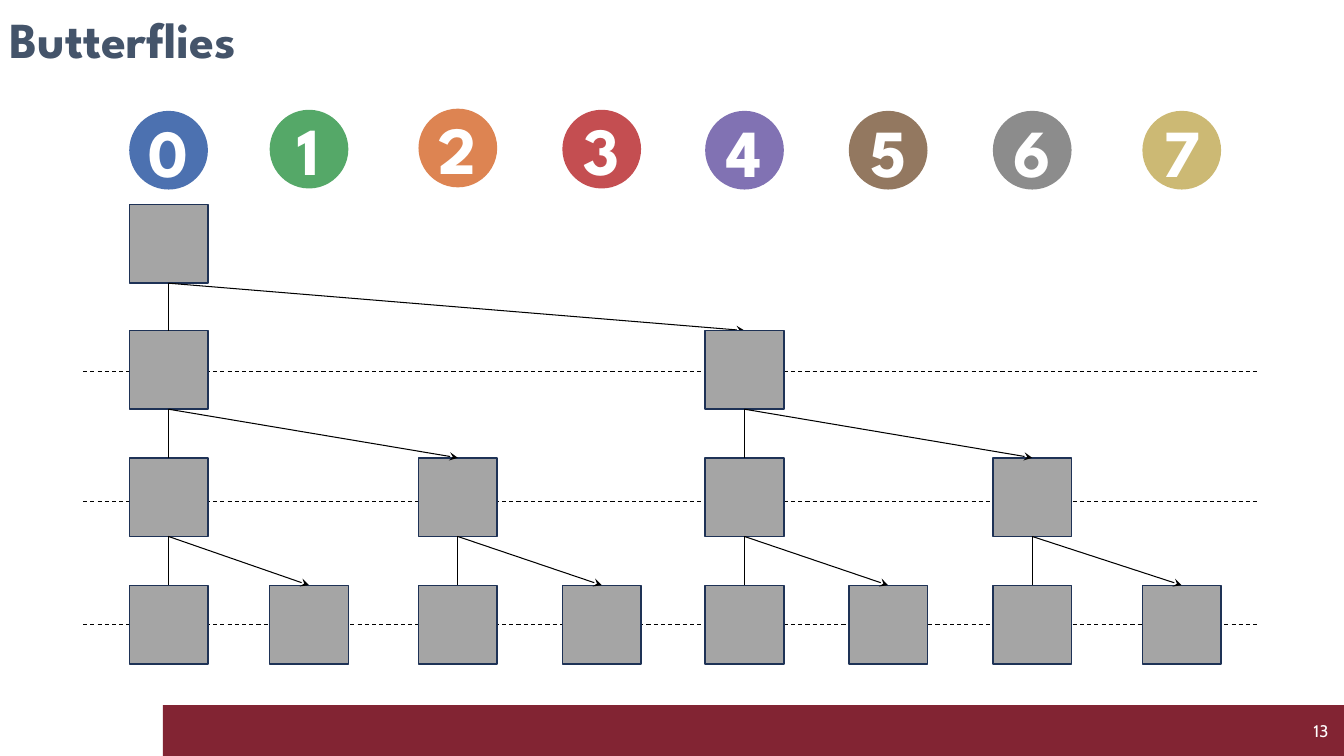
from pptx import Presentation
from pptx.dml.color import RGBColor
from pptx.enum import dml, shapes, text
from pptx.oxml.ns import qn
from pptx.util import Pt
from lxml import etree

# Ranks: left, circle top, circle colour
RANKS = [
    (92.3, 79.2, "4C71B0"), (192.6, 78.4, "55A868"),
    (298.9, 77.6, "DD8452"), (401.7, 78.4, "C44E51"),
    (503.7, 79.2, "8172B3"), (606.3, 79.2, "937860"),
    (709.2, 79.2, "8C8C8C"), (816, 79.2, "CCB974"),
]
TOPS = [146.1, 236.1, 327, 418]
DASHES = [265.6, 358.4, 446.3]
SIZE = 56.2
HEAD = "League Spartan"
BODY = "Cabin"
SHAPE = shapes.MSO_SHAPE
ALIGN = text.PP_ALIGN

deck = Presentation()
deck.slide_width, deck.slide_height = Pt(960), Pt(540)
slide = deck.slides.add_slide(deck.slide_layouts[6])
tree = slide.shapes


def color(hexa):
    return RGBColor.from_string(hexa)


def shape(kind, x, y, w, h, fill, edge=None):
    item = tree.add_shape(kind, Pt(x), Pt(y), Pt(w), Pt(h))
    item.shadow.inherit = False
    item.fill.solid()
    item.fill.fore_color.rgb = color(fill)
    if edge:
        item.line.color.rgb = color(edge)
        item.line.width = Pt(1)
    else:
        item.line.fill.background()
    return item


def write(item, words, align, hexa, **form):
    frame = item.text_frame
    frame.vertical_anchor = text.MSO_ANCHOR.MIDDLE
    para = frame.paragraphs[0]
    para.alignment = align
    run = para.add_run()
    run.text = words
    run.font.color.rgb = color(hexa)
    for key, value in form.items():
        setattr(run.font, key, value)
    return frame


def label(x, y, w, h, *args, **form):
    box = tree.add_textbox(Pt(x), Pt(y), Pt(w), Pt(h))
    frame = write(box, *args, **form)
    frame.word_wrap = True
    return frame


def link(x1, y1, x2, y2, arrow=False):
    line = tree.add_connector(shapes.MSO_CONNECTOR.STRAIGHT,
                              Pt(x1), Pt(y1), Pt(x2), Pt(y2))
    line.line.color.rgb = color("000000")
    line.line.width = Pt(0.75)
    if arrow:
        etree.SubElement(line.line._get_or_add_ln(), qn("a:tailEnd"), type="stealth")
    etree.SubElement(line._element.spPr, qn("a:effectLst"))
    return line


def join(start, end, arrow=False):
    """Link the bottom of one square to the top of another."""
    line = link(0, 0, 0, 0, arrow)
    line.begin_connect(start, 2)
    line.end_connect(end, 0)
    return line


shape(SHAPE.RECTANGLE, 116.4, 503.7, 843.6, 36.3, "822433")
title = label(0, 0, 894, 60, "Butterflies", ALIGN.LEFT, "44546A",
              size=Pt(36), name=HEAD, bold=True)
title.paragraphs[0].line_spacing = 0.9
label(740, 507.6, 216, 28.8, "13", ALIGN.RIGHT, "FFFFFF", size=Pt(12), name=BODY)

for rank, (left, top, fill) in enumerate(RANKS):
    disc = shape(SHAPE.OVAL, left, top, SIZE, SIZE, fill)
    frame = write(disc, str(rank), ALIGN.CENTER, "FFFFFF",
                  size=Pt(48), name=HEAD, bold=True)
    frame.word_wrap = False


def square(rank, level):
    return shape(SHAPE.RECTANGLE, RANKS[rank][0], TOPS[level], SIZE, SIZE,
                 "A5A5A5", "1E3256")


# Each level halves the distance between the sender and its new partner
row = {0: square(0, 0)}
for level, y in enumerate(DASHES, 1):
    dash = link(59.4, y, 900, y)
    dash.line.dash_style = dml.MSO_LINE.DASH
    step = len(RANKS) >> level
    above, row = row, {}
    for rank, sender in above.items():
        row[rank] = square(rank, level)
        row[rank + step] = square(rank + step, level)
        join(sender, row[rank])
        arrow = join(sender, row[rank + step], True)
        if level == 1:  # the first arrowhead lies under its square
            row[rank + step]._element.addprevious(arrow._element)

deck.save("out.pptx")
